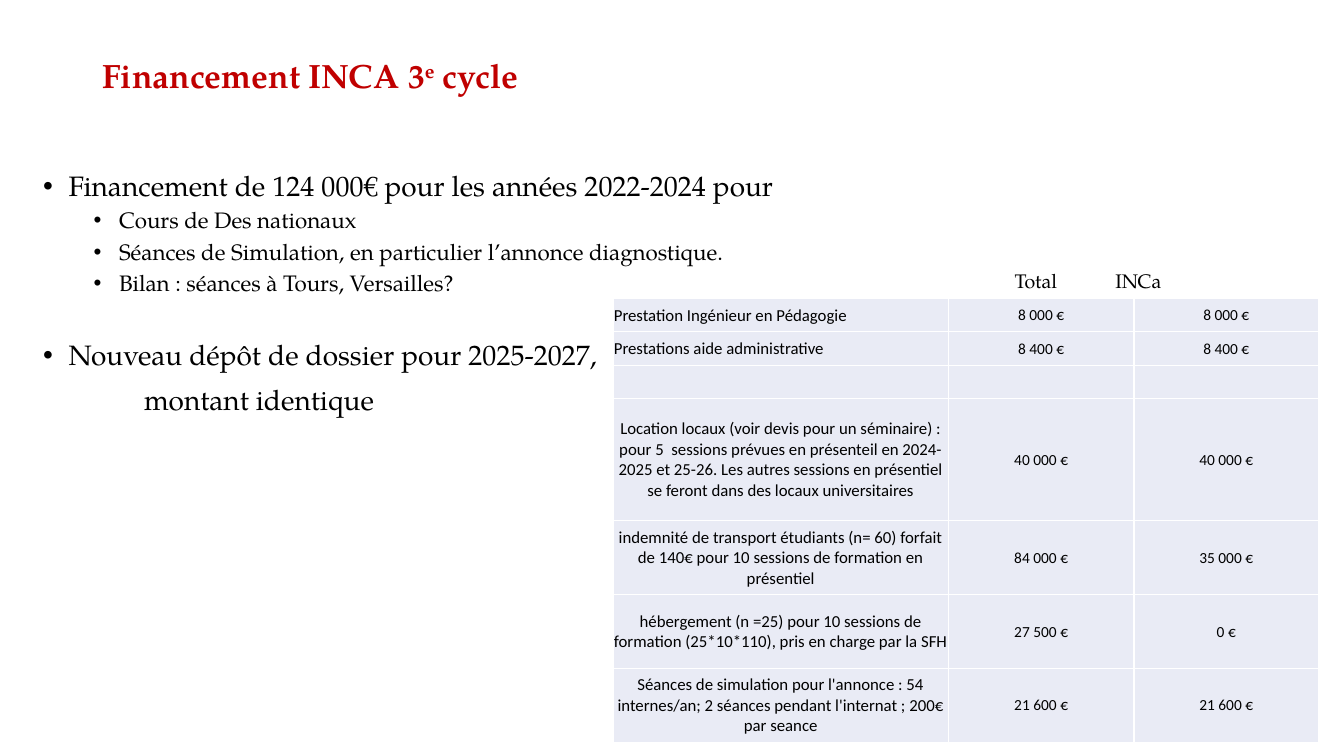
import pptx
import pptx.util
import pptx.dml.color
import pptx.enum.text
import pptx.oxml
import pptx.oxml.ns

Cm = pptx.util.Cm
Pt = pptx.util.Pt
RGBColor = pptx.dml.color.RGBColor
ALIGN = pptx.enum.text.PP_ALIGN
MIDDLE = pptx.enum.text.MSO_ANCHOR.MIDDLE

RED = RGBColor(0xC0, 0x00, 0x00)
BLACK = RGBColor(0x00, 0x00, 0x00)
PALE = RGBColor(0xE9, 0xEB, 0xF5)
WHITE = RGBColor(0xFF, 0xFF, 0xFF)

SERIF = "TeX Gyre Pagella"
SANS = "Calibri"

POINTS = [
    ("Financement de 124 000€ pour les années 2022-2024 pour", 20, 10, 0.64, True),
    ("Cours de Des nationaux", 16, 5, 1.91, True),
    ("Séances de Simulation, en particulier l’annonce diagnostique.", 16, 5, 1.91, True),
    ("Bilan : séances à Tours, Versailles?", 16, 5, 1.91, True),
    ("Nouveau dépôt de dossier pour 2025-2027,", 20, 32.5, 0.64, True),
    ("montant identique", 20, 10, 2.54, False),
]

COSTS = [
    ("Prestation Ingénieur en Pédagogie", "8 000 €", "8 000 €"),
    ("Prestations aide administrative", "8 400 €", "8 400 €"),
    ("", "", ""),
    ("Location locaux (voir devis pour un séminaire) : pour 5  sessions prévues en "
     "présenteil en 2024-2025 et 25-26. Les autres sessions en présentiel se feront "
     "dans des locaux universitaires", "40 000 €", "40 000 €"),
    ("indemnité de transport étudiants (n= 60) forfait de 140€ pour 10 sessions de "
     "formation en présentiel", "84 000 €", "35 000 €"),
    ("hébergement (n =25) pour 10 sessions de formation (25*10*110), pris en charge "
     "par la SFH", "27 500 €", "0 €"),
    ("Séances de simulation pour l'annonce : 54 internes/an; 2 séances pendant "
     "l'internat ; 200€ par seance", "21 600 €", "21 600 €"),
]
WIDTHS = [8.45, 4.68, 4.65]
HEIGHTS = [0.84] * 3 + [3.08] + [1.86] * 3


def apply(item, **values):
    for name, value in values.items():
        setattr(item, name, value)


class Page:
    def __init__(self, deck):
        self.slide = deck.slides.add_slide(deck.slide_layouts[6])
        self.style = {"name": SERIF, "color": BLACK}

    def put(self, para, text, **values):
        run = para.add_run()
        run.text = text
        look = {**self.style, **values}
        run.font.color.rgb = look.pop("color")
        apply(run.font, **look)
        return run

    def box(self, left, top, width, height, **values):
        frame = self.slide.shapes.add_textbox(
            Cm(left), Cm(top), Cm(width), Cm(height)).text_frame
        apply(frame, word_wrap=True, **values)
        return frame

    def title(self, parts, *place):
        para = self.box(*place, vertical_anchor=MIDDLE).paragraphs[0]
        para.line_spacing = 0.9
        for text, shift in parts:
            run = self.put(para, text, size=Pt(24), bold=True, color=RED)
            run._r.get_or_add_rPr().set("baseline", str(shift))

    def bullets(self, points, *place):
        frame = self.box(*place)
        for index, (text, size, gap, margin, dot) in enumerate(points):
            para = frame.add_paragraph() if index else frame.paragraphs[0]
            apply(para, line_spacing=0.9, space_before=Pt(gap))
            self.put(para, text, size=Pt(size))
            props = para._p.get_or_add_pPr()
            props.set("marL", str(Cm(margin)))
            if dot:
                props.set("indent", str(-Cm(0.64)))
                ns = pptx.oxml.ns.nsdecls("a")
                for mark in (f'<a:buFont {ns} typeface="Arial"/>',
                             f'<a:buChar {ns} char="•"/>'):
                    props.append(pptx.oxml.parse_xml(mark))

    def label(self, text, *place):
        self.put(self.box(*place).paragraphs[0], text, size=Pt(14))

    def border(self, cell):
        props = cell._tc.get_or_add_tcPr()
        for side in "LRTB":
            props.append(pptx.oxml.parse_xml(
                f'<a:ln{side} {pptx.oxml.ns.nsdecls("a")} w="{Pt(1)}"><a:solidFill>'
                f'<a:srgbClr val="{WHITE}"/></a:solidFill></a:ln{side}>'))

    def table(self, rows, widths, heights, left, top):
        grid = self.slide.shapes.add_table(
            len(rows), len(widths), Cm(left), Cm(top),
            Cm(sum(widths)), Cm(sum(heights))).table
        apply(grid, first_row=False, horz_banding=False)
        for column, width in zip(grid.columns, widths):
            column.width = Cm(width)
        for y, (row, height) in enumerate(zip(rows, heights)):
            grid.rows[y].height = Cm(height)
            for x, text in enumerate(row):
                cell = grid.cell(y, x)
                apply(cell, vertical_anchor=MIDDLE, margin_left=Cm(0.02),
                      margin_right=Cm(0.02), margin_top=Cm(0.02), margin_bottom=0)
                self.border(cell)
                cell.fill.solid()
                cell.fill.fore_color.rgb = PALE
                para = cell.text_frame.paragraphs[0]
                para.alignment = ALIGN.LEFT if x == 0 and y < 2 else ALIGN.CENTER
                if text:
                    self.put(para, text, name=SANS, size=Pt(11 if x else 12))


def main():
    deck = pptx.Presentation()
    apply(deck, slide_width=Cm(33.87), slide_height=Cm(19.05))
    page = Page(deck)
    page.title([("Financement INCA 3", 0), ("e", 30000), (" cycle", 0)],
               2.33, 1.01, 29.21, 1.91)
    page.bullets(POINTS, 0.84, 4.22, 29.21, 12.09)
    page.table(COSTS, WIDTHS, HEIGHTS, 15.45, 7.52)
    page.label("Total\t\tINCa", 25.32, 6.65, 6.83, 0.86)
    deck.save("out.pptx")


if __name__ == "__main__":
    main()
